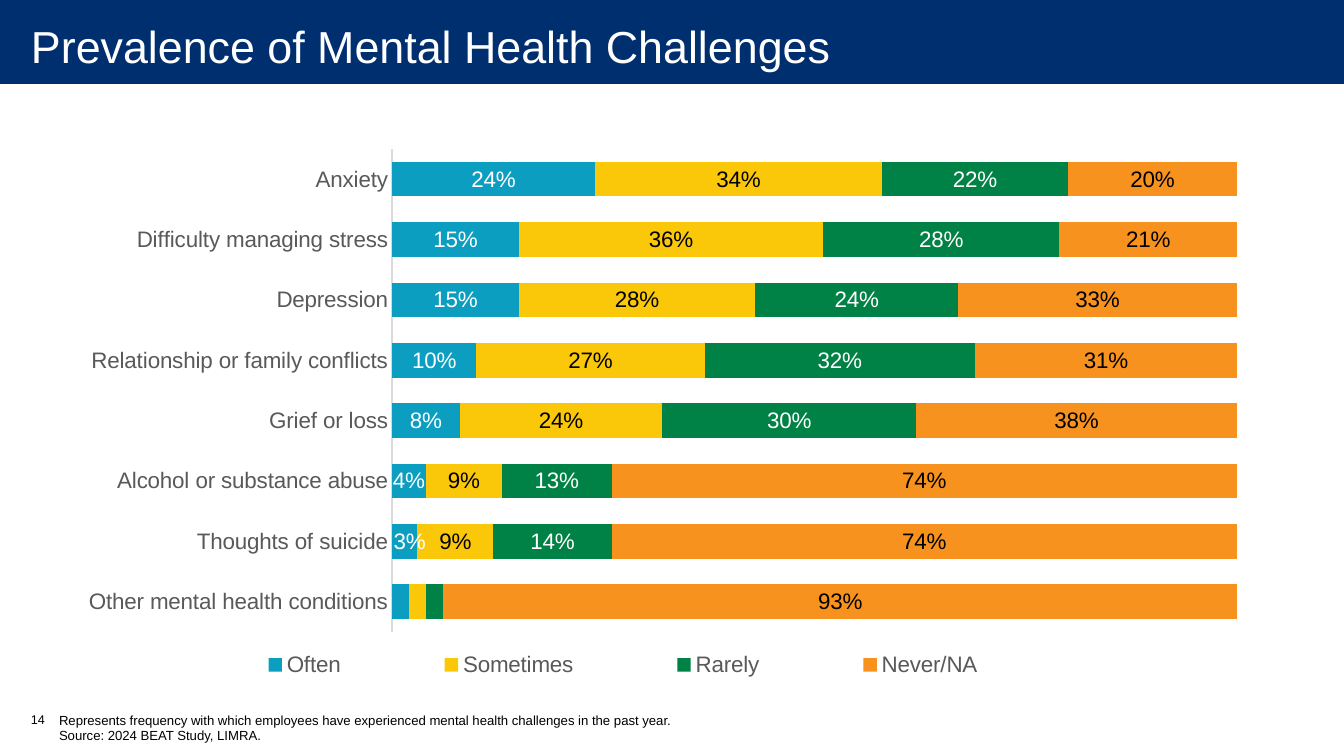
import copy

import pptx
import pptx.util
import pptx.chart.data
import pptx.dml.color
import pptx.enum.chart
import pptx.enum.shapes
import pptx.enum.text
import pptx.oxml
import pptx.oxml.ns

PX = 914400 / 100.8
FONT = "Arial"
NAVY = pptx.dml.color.RGBColor(0x00, 0x2F, 0x70)
WHITE = pptx.dml.color.RGBColor(0xFF, 0xFF, 0xFF)
BLACK = pptx.dml.color.RGBColor(0x00, 0x00, 0x00)
GREY = pptx.dml.color.RGBColor(0x59, 0x59, 0x59)
LIGHT_GREY = pptx.dml.color.RGBColor(0xD9, 0xD9, 0xD9)
BLUE = pptx.dml.color.RGBColor(0x0B, 0x9E, 0xC1)
YELLOW = pptx.dml.color.RGBColor(0xFA, 0xC8, 0x09)
GREEN = pptx.dml.color.RGBColor(0x00, 0x81, 0x45)
ORANGE = pptx.dml.color.RGBColor(0xF7, 0x92, 0x1E)

CHART_BOX = (49, 124, 1253, 572)
PLOT_BOX = (343, 25, 845, 483)
LEGEND_BOX = (123, 521, 902, 40)
SMALLEST_LABEL = 0.03
LABEL_SHIFT = 5
CHALLENGES = [
    "Other mental health conditions", "Thoughts of suicide",
    "Alcohol or substance abuse", "Grief or loss",
    "Relationship or family conflicts", "Depression",
    "Difficulty managing stress", "Anxiety",
]
FREQUENCIES = [
    ("Often", [0.02, 0.03, 0.04, 0.08, 0.1, 0.15, 0.15, 0.24], BLUE, WHITE),
    ("Sometimes", [0.02, 0.09, 0.09, 0.24, 0.27, 0.28, 0.36, 0.34], YELLOW, BLACK),
    ("Rarely", [0.02, 0.14, 0.13, 0.3, 0.32, 0.24, 0.28, 0.22], GREEN, WHITE),
    ("Never/NA", [0.93, 0.74, 0.74, 0.38, 0.31, 0.33, 0.21, 0.2], ORANGE, BLACK),
]


def px(*lengths):
    return [pptx.util.Emu(round(n * PX)) for n in lengths]


def set_font(font, size, color):
    font.name = FONT
    font.size = pptx.util.Pt(size)
    font.color.rgb = color


def add_band(s, box, color):
    sp = s.shapes.add_shape(pptx.enum.shapes.MSO_SHAPE.RECTANGLE, *px(*box))
    sp.shadow.inherit = False
    sp.fill.solid()
    sp.fill.fore_color.rgb = color
    sp.line.fill.background()


def add_text(s, box, lines, size, color, insets=(10, 5, 10, 5),
             anchor=pptx.enum.text.MSO_ANCHOR.TOP):
    tf = s.shapes.add_textbox(*px(*box)).text_frame
    tf.word_wrap = True
    tf.vertical_anchor = anchor
    tf.margin_left, tf.margin_top, tf.margin_right, tf.margin_bottom = px(*insets)
    for i, line in enumerate(lines):
        p = tf.add_paragraph() if i else tf.paragraphs[0]
        r = p.add_run()
        r.text = line
        set_font(r.font, size, color)


def make_element(tag, content):
    return pptx.oxml.parse_xml(
        f'<c:{tag} {pptx.oxml.ns.nsdecls("c")}>{content}</c:{tag}>')


def make_layout(box, inner=False):
    x, y, w, h = (n / CHART_BOX[2 + i % 2] for i, n in enumerate(box))
    target = '<c:layoutTarget val="inner"/>' if inner else ""
    return make_element(
        "layout",
        f'<c:manualLayout>{target}<c:xMode val="edge"/><c:yMode val="edge"/>'
        f'<c:x val="{x}"/><c:y val="{y}"/><c:w val="{w}"/><c:h val="{h}"/>'
        '</c:manualLayout>')


def place_part(part, layout):
    for old in part.findall(pptx.oxml.ns.qn("c:layout")):
        part.remove(old)
    position = part.find(pptx.oxml.ns.qn("c:legendPos"))
    if position is None:
        part.insert(0, layout)
    else:
        position.addnext(layout)


def shift_label(series, index, color):
    label = series.points[index].data_label
    set_font(label.font, 16, color)
    label.position = pptx.enum.chart.XL_LABEL_POSITION.CENTER
    labels = series.data_labels._element
    number_format = copy.deepcopy(labels.find(pptx.oxml.ns.qn("c:numFmt")))
    layout = make_element(
        "layout",
        f'<c:manualLayout><c:x val="{LABEL_SHIFT / CHART_BOX[2]}"/>'
        '<c:y val="0"/></c:manualLayout>')
    for element in labels.findall(pptx.oxml.ns.qn("c:dLbl")):
        idx = element.find(pptx.oxml.ns.qn("c:idx"))
        if idx.get("val") == str(index):
            idx.addnext(layout)
            layout.addnext(number_format)


def style_series(series, values, fill, label_color):
    series.format.fill.solid()
    series.format.fill.fore_color.rgb = fill
    series.invert_if_negative = False
    labels = series.data_labels
    labels.show_value = True
    labels.number_format = "0%"
    labels.number_format_is_linked = False
    labels.position = pptx.enum.chart.XL_LABEL_POSITION.CENTER
    set_font(labels.font, 16, label_color)
    hidden = [i for i, value in enumerate(values) if value < SMALLEST_LABEL]
    for order, i in enumerate(hidden):
        labels._element.insert(order, make_element(
            "dLbl", f'<c:idx val="{i}"/><c:delete val="1"/>'))
    if SMALLEST_LABEL in values:
        shift_label(series, values.index(SMALLEST_LABEL), label_color)


def add_frequency_chart(s):
    data = pptx.chart.data.CategoryChartData(number_format="0%")
    data.categories = CHALLENGES
    for name, values, _, _ in FREQUENCIES:
        data.add_series(name, values)
    chart = s.shapes.add_chart(
        pptx.enum.chart.XL_CHART_TYPE.BAR_STACKED_100, *px(*CHART_BOX), data).chart
    chart.has_title = False
    set_font(chart.font, 16, BLACK)

    plot = chart.plots[0]
    plot.gap_width = 75
    plot.overlap = 100
    plot.vary_by_categories = False
    for series, (_, values, fill, label_color) in zip(plot.series, FREQUENCIES):
        style_series(series, values, fill, label_color)

    axis = chart.category_axis
    axis.major_tick_mark = pptx.enum.chart.XL_TICK_MARK.NONE
    axis.format.line.color.rgb = LIGHT_GREY
    axis.format.line.width = pptx.util.Pt(0.75)
    set_font(axis.tick_labels.font, 16, GREY)
    chart.value_axis.has_major_gridlines = False
    chart.value_axis.visible = False

    chart.has_legend = True
    legend = chart.legend
    legend.position = pptx.enum.chart.XL_LEGEND_POSITION.BOTTOM
    legend.include_in_layout = False
    set_font(legend.font, 16, GREY)
    place_part(legend._element, make_layout(LEGEND_BOX))
    place_part(chart._chartSpace.chart.plotArea, make_layout(PLOT_BOX, inner=True))


def main():
    prs = pptx.Presentation()
    prs.slide_width, prs.slide_height = px(1344, 756)
    s = prs.slides.add_slide(prs.slide_layouts[6])
    add_band(s, (0, -3, 1344, 87), NAVY)
    add_text(s, (1, -3, 1344, 98), ["Prevalence of Mental Health Challenges"],
             32, WHITE, (30, 0, 20, 0), pptx.enum.text.MSO_ANCHOR.MIDDLE)
    add_frequency_chart(s)
    add_text(s, (49, 707, 673, 41), [
        "Represents frequency with which employees have experienced "
        "mental health challenges in the past year.",
        "Source: 2024 BEAT Study, LIMRA.",
    ], 9.33, BLACK)
    add_text(s, (21, 707, 49, 40), ["14"], 9, BLACK)
    prs.save("out.pptx")


if __name__ == "__main__":
    main()
